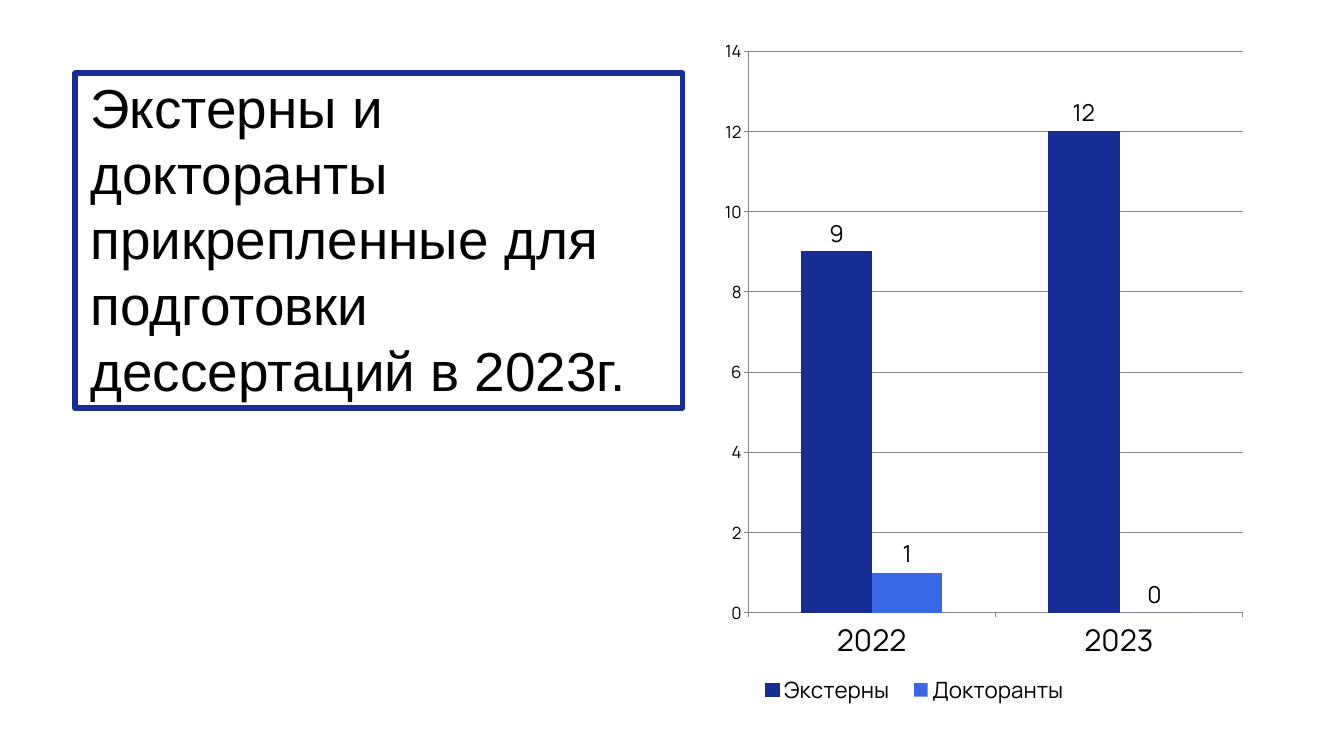
import pptx
import pptx.chart.data
import pptx.dml.color
import pptx.enum.chart
import pptx.enum.text
import pptx.oxml
import pptx.oxml.ns
import pptx.util

Pt = pptx.util.Pt

# Content
HEADING = ["Экстерны и", "докторанты", "прикрепленные для", "подготовки",
           "дессертаций в 2023г."]
YEARS = ["2022", "2023"]
ATTACHED = [("Экстерны", (9, 12), "152D95"), ("Докторанты", (1, 0), "3A67E6")]

# Places in points: left, top, width, height
HEADING_BOX = (80.6, 78.5, 650.9, 358.6)
CHART_BOX = (761.8, 38.9, 594, 725.8)
# Places as fractions of the chart: x, y, w, h
PLOT_AREA = (0.067, 0.022, 0.892, 0.829)
LEGEND_AREA = (0.067, 0.935, 0.6, 0.06)
CHART_FONT = "Manrope"


def colour(hex_text):
    return pptx.dml.color.RGBColor.from_string(hex_text)


def set_font(font, size, name=CHART_FONT):
    font.size = Pt(size)
    font.name = name
    font.bold = False
    font.color.rgb = colour("000000")


def set_line(line, hex_text, width):
    line.color.rgb = colour(hex_text)
    line.width = Pt(width)


def manual_layout(area, inner=False):
    target = '<c:layoutTarget val="inner"/>' if inner else ""
    modes = "".join(f'<c:{side}Mode val="edge"/>' for side in "xy")
    sizes = "".join(f'<c:{key} val="{value}"/>' for key, value in zip("xywh", area))
    return pptx.oxml.parse_xml(
        f'<c:layout {pptx.oxml.ns.nsdecls("c")}><c:manualLayout>'
        f'{target}{modes}{sizes}</c:manualLayout></c:layout>')


def place_layout(parent, layout, index):
    for old in parent.findall(pptx.oxml.ns.qn("c:layout")):
        parent.remove(old)
    parent.insert(index, layout)


deck = pptx.Presentation()
deck.slide_width, deck.slide_height = Pt(1440), Pt(810)
slide = deck.slides.add_slide(deck.slide_layouts[5])

# Framed heading
heading = slide.shapes.title
heading.left, heading.top, heading.width, heading.height = map(Pt, HEADING_BOX)
set_line(heading.line, "152D95", 6)
frame = heading.text_frame
frame.text = "\n".join(HEADING)
frame.word_wrap = True
frame.auto_size = pptx.enum.text.MSO_AUTO_SIZE.NONE
frame.vertical_anchor = pptx.enum.text.MSO_ANCHOR.TOP
frame.margin_left = Pt(16.3)
frame.margin_top = frame.margin_right = frame.margin_bottom = 0
for paragraph in frame.paragraphs:
    paragraph.alignment = pptx.enum.text.PP_ALIGN.LEFT
    paragraph.line_spacing = Pt(70.6)
    paragraph.space_before = Pt(0)
    set_font(paragraph.font, 58.8, "Arial")

# Column chart
attached_data = pptx.chart.data.CategoryChartData()
attached_data.categories = YEARS
for name, counts, _ in ATTACHED:
    attached_data.add_series(name, counts)
chart = slide.shapes.add_chart(
    pptx.enum.chart.XL_CHART_TYPE.COLUMN_CLUSTERED,
    *map(Pt, CHART_BOX), attached_data).chart
chart.has_title = False
set_font(chart.font, 18, "Calibri")

columns = chart.plots[0]
columns.gap_width = 150
columns.overlap = 0
columns.vary_by_categories = False
for series, (_, _, fill) in zip(columns.series, ATTACHED):
    series.format.fill.solid()
    series.format.fill.fore_color.rgb = colour(fill)
    labels = series.data_labels
    labels.show_value = True
    labels.position = pptx.enum.chart.XL_LABEL_POSITION.OUTSIDE_END
    set_font(labels.font, 25)
set_line(columns.series[0].format.line, "152D95", 0.75)

# Axes
counts_axis, years_axis = chart.value_axis, chart.category_axis
for axis, size in ((counts_axis, 18), (years_axis, 32)):
    set_font(axis.tick_labels.font, size)
    set_line(axis.format.line, "878787", 0.75)
    axis.major_tick_mark = pptx.enum.chart.XL_TICK_MARK.OUTSIDE
counts_axis.minimum_scale, counts_axis.maximum_scale = 0, 14
counts_axis.major_unit = 2
counts_axis.has_major_gridlines = True
set_line(counts_axis.major_gridlines.format.line, "878787", 0.75)

# Legend and plot placement
chart.has_legend = True
legend = chart.legend
legend.position = pptx.enum.chart.XL_LEGEND_POSITION.BOTTOM
legend.include_in_layout = False
set_font(legend.font, 24)
legend_xml = legend._element
place_layout(legend_xml, manual_layout(LEGEND_AREA), 1)
plot_xml = chart._chartSpace.chart.plotArea
place_layout(plot_xml, manual_layout(PLOT_AREA, inner=True), 0)

deck.save("out.pptx")
